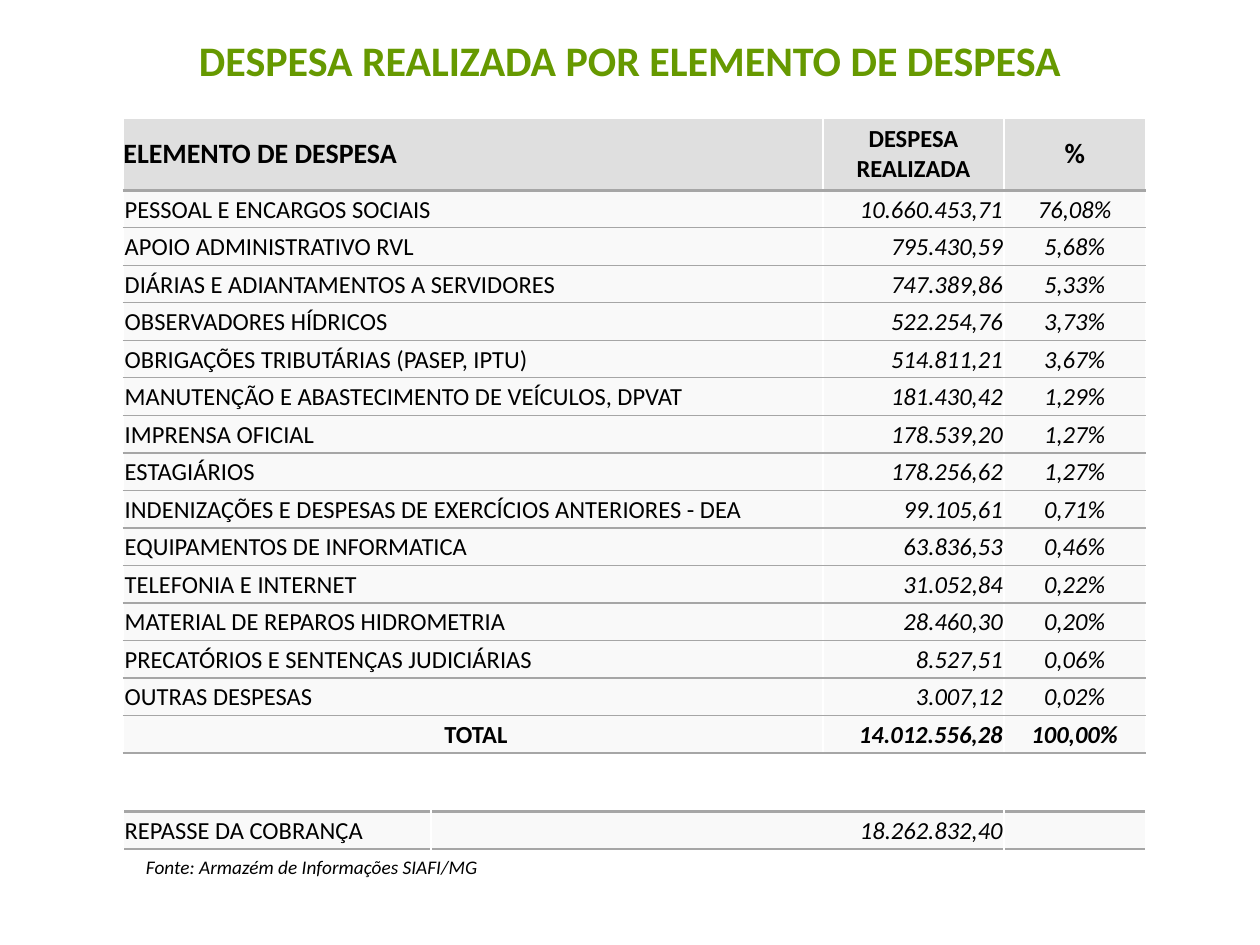
import pptx
import pptx.dml.color
import pptx.enum.text
import pptx.oxml.ns
import pptx.util
from dataclasses import dataclass
from lxml import etree

Inches = pptx.util.Inches
Pt = pptx.util.Pt
ALIGN = pptx.enum.text.PP_ALIGN
MIDDLE = pptx.enum.text.MSO_ANCHOR.MIDDLE


@dataclass(frozen=True)
class Theme:
    font: str = "Calibri"
    title: str = "669900"
    ink: str = "000000"
    header_fill: str = "DFDFDF"
    body_fill: str = "F9F9F9"
    rule: str = "A6A6A6"
    gap: str = "FFFFFF"
    title_size: int = 24
    heading_size: int = 16
    body_size: int = 14
    source_size: int = 11
    thin: float = 1
    thick: float = 2.25


THEME = Theme()

HEADINGS = ["ELEMENTO DE DESPESA", "DESPESA REALIZADA", "%"]
EXPENSES = [
    ("PESSOAL E ENCARGOS SOCIAIS", "10.660.453,71", "76,08%"),
    ("APOIO ADMINISTRATIVO RVL", "795.430,59", "5,68%"),
    ("DIÁRIAS E ADIANTAMENTOS A SERVIDORES", "747.389,86", "5,33%"),
    ("OBSERVADORES HÍDRICOS", "522.254,76", "3,73%"),
    ("OBRIGAÇÕES TRIBUTÁRIAS (PASEP, IPTU)", "514.811,21", "3,67%"),
    ("MANUTENÇÃO E ABASTECIMENTO DE VEÍCULOS, DPVAT", "181.430,42", "1,29%"),
    ("IMPRENSA OFICIAL", "178.539,20", "1,27%"),
    ("ESTAGIÁRIOS", "178.256,62", "1,27%"),
    ("INDENIZAÇÕES E DESPESAS DE EXERCÍCIOS ANTERIORES - DEA", "99.105,61", "0,71%"),
    ("EQUIPAMENTOS DE INFORMATICA", "63.836,53", "0,46%"),
    ("TELEFONIA E INTERNET", "31.052,84", "0,22%"),
    ("MATERIAL DE REPAROS HIDROMETRIA", "28.460,30", "0,20%"),
    ("PRECATÓRIOS E SENTENÇAS JUDICIÁRIAS", "8.527,51", "0,06%"),
    ("OUTRAS DESPESAS", "3.007,12", "0,02%"),
]
TOTAL = (" TOTAL", "14.012.556,28", "100,00%")
TRANSFER = ("REPASSE DA COBRANÇA", "18.262.832,40", "")

TABLE_LEFT = 0.98
TABLE_HEIGHT = 5.04
HEADER_HEIGHT = 0.57
ROW_HEIGHT = (TABLE_HEIGHT - HEADER_HEIGHT) / (len(EXPENSES) + 1)
COLUMN_ALIGN = (ALIGN.LEFT, ALIGN.RIGHT, ALIGN.CENTER)


def write(paragraph, text, size, color=THEME.ink, align=ALIGN.LEFT, bold=False, italic=False):
    paragraph.alignment = align
    run = paragraph.add_run()
    run.text = text
    font = run.font
    font.name, font.size, font.bold, font.italic = THEME.font, Pt(size), bold, italic
    font.color.rgb = pptx.dml.color.RGBColor.from_string(color)


def add_text(slide, box, text, size, **style):
    frame = slide.shapes.add_textbox(*map(Inches, box)).text_frame
    frame.word_wrap = True
    frame.vertical_anchor = MIDDLE
    write(frame.paragraphs[0], text, size, **style)


def set_borders(cell, top, bottom):
    """Give the cell white sides and the (colour, width) rules above and below."""
    side = (THEME.gap, THEME.thin)
    borders = {"a:lnL": side, "a:lnR": side, "a:lnT": top, "a:lnB": bottom}
    properties = cell._tc.get_or_add_tcPr()
    for position, (tag, (color, width)) in enumerate(borders.items()):
        line = etree.Element(pptx.oxml.ns.qn(tag), w=str(Pt(width)))
        fill = etree.SubElement(line, pptx.oxml.ns.qn("a:solidFill"))
        etree.SubElement(fill, pptx.oxml.ns.qn("a:srgbClr"), val=color)
        properties.insert(position, line)


def fill_cell(cell, text, fill, top, bottom, margin, size=THEME.body_size, **style):
    cell.vertical_anchor = MIDDLE
    cell.margin_left = cell.margin_right = cell.margin_top = Inches(margin)
    cell.margin_bottom = 0
    cell.fill.solid()
    cell.fill.fore_color.rgb = pptx.dml.color.RGBColor.from_string(fill)
    set_borders(cell, top, bottom)
    paragraph = cell.text_frame.paragraphs[0]
    if text:
        write(paragraph, text, size, **style)
    else:  # keep an empty cell from stretching its row
        etree.SubElement(paragraph._p, pptx.oxml.ns.qn("a:endParaRPr"), sz=str(size * 100))


def add_grid(slide, top, widths, heights):
    grid = slide.shapes.add_table(
        len(heights), len(widths), Inches(TABLE_LEFT), Inches(top),
        Inches(sum(widths)), Inches(sum(heights))).table
    grid.horz_banding = False
    for column, width in zip(grid.columns, widths):
        column.width = Inches(width)
    for row, height in zip(grid.rows, heights):
        row.height = Inches(height)
    return grid


def fill_body_row(row, values, top_width, is_total=False):
    for index, (cell, value) in enumerate(zip(row.cells, values)):
        centred = is_total and index == 0
        fill_cell(cell, value, THEME.body_fill,
                  (THEME.rule, top_width), (THEME.rule, THEME.thin), 0.01,
                  align=ALIGN.CENTER if centred else COLUMN_ALIGN[index],
                  bold=is_total, italic=index > 0)


def add_expense_table(slide):
    body = EXPENSES + [TOTAL]
    expenses = add_grid(slide, 0.94, [5.55, 1.44, 1.12],
                        [HEADER_HEIGHT] + [ROW_HEIGHT] * len(body))
    header, *rows = expenses.rows
    for index, (cell, heading) in enumerate(zip(header.cells, HEADINGS)):
        fill_cell(cell, heading, THEME.header_fill,
                  (THEME.gap, THEME.thin), (THEME.rule, THEME.thick), 0,
                  size=THEME.body_size if index == 1 else THEME.heading_size,
                  align=ALIGN.CENTER if index else ALIGN.LEFT, bold=True)
    for index, (row, values) in enumerate(zip(rows, body)):
        fill_body_row(row, values, THEME.thin if index else THEME.thick, values is TOTAL)


def add_transfer_table(slide):
    transfer = add_grid(slide, 6.44, [2.44, 4.55, 1.12], [ROW_HEIGHT])
    transfer.first_row = False
    fill_body_row(transfer.rows[0], TRANSFER, THEME.thick)


def main():
    deck = pptx.Presentation()
    deck.slide_width, deck.slide_height = Inches(10), Inches(7.5)
    slide = deck.slides.add_slide(deck.slide_layouts[6])

    # Title
    add_text(slide, (0.12, 0.13, 9.76, 0.69), "DESPESA REALIZADA POR ELEMENTO DE DESPESA",
             THEME.title_size, color=THEME.title, align=ALIGN.CENTER, bold=True)

    # Expenses by element, then the amount transferred
    add_expense_table(slide)
    add_transfer_table(slide)

    # Source line
    add_text(slide, (1.06, 6.78, 7.95, 0.2), "Fonte: Armazém de Informações SIAFI/MG",
             THEME.source_size, italic=True)

    deck.save("out.pptx")


if __name__ == "__main__":
    main()
